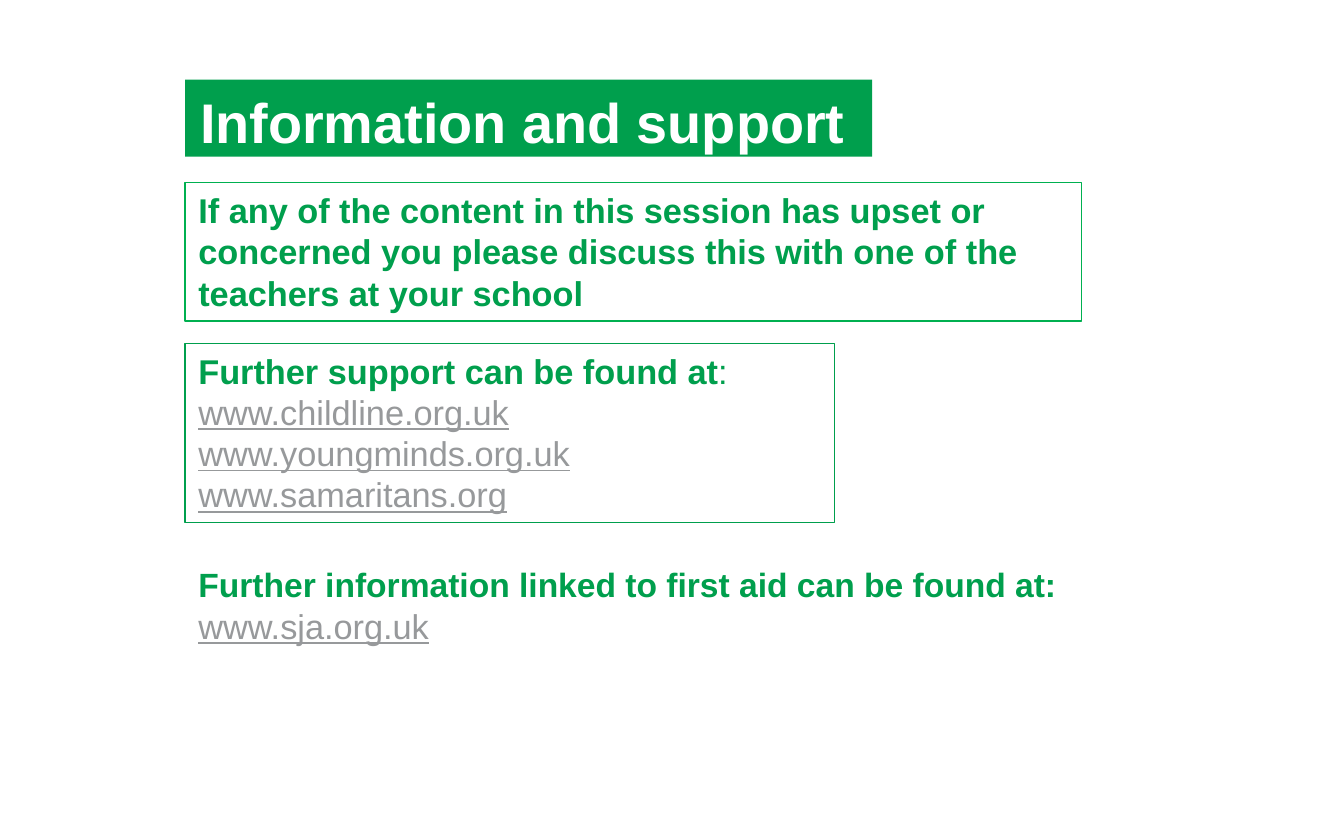
import pptx
import pptx.util
import pptx.dml.color
import pptx.enum.shapes
import pptx.enum.text

Pt = pptx.util.Pt
GREEN = pptx.dml.color.RGBColor(0x00, 0x9F, 0x4D)
BRIGHT_GREEN = pptx.dml.color.RGBColor(0x00, 0xB0, 0x50)
GREY = pptx.dml.color.RGBColor(0x97, 0x99, 0x9B)
WHITE = pptx.dml.color.RGBColor(0xFF, 0xFF, 0xFF)
LEFT = Pt(99.2)


def add_span(para, text, size, colour, bold=False, underline=False):
    span = para.add_run()
    span.text = text
    span.font.name = "Arial"
    span.font.size = Pt(size)
    span.font.color.rgb = colour
    span.font.bold = bold
    span.font.underline = underline


deck = pptx.Presentation()
deck.slide_width, deck.slide_height = Pt(720), Pt(450)
page = deck.slides.add_slide(deck.slide_layouts[5])

# Title band
title = page.shapes.title
title.left, title.top, title.width, title.height = LEFT, Pt(42.7), Pt(368), Pt(41.3)
title.fill.solid()
title.fill.fore_color.rgb = GREEN
frame = title.text_frame
frame.auto_size = pptx.enum.text.MSO_AUTO_SIZE.NONE
frame.vertical_anchor = pptx.enum.text.MSO_ANCHOR.TOP
frame.margin_left = frame.margin_right = Pt(8)
frame.margin_top = Pt(4.3)
frame.margin_bottom = 0
frame.paragraphs[0].alignment = pptx.enum.text.PP_ALIGN.LEFT
add_span(frame.paragraphs[0], "Information and support", 29.9, WHITE, bold=True)

# Text blocks: top, width, height, outline, heading size, heading, ending, links
blocks = [
    (97.9, 480.2, 74.2, BRIGHT_GREEN, 18.4,
     "If any of the content in this session has upset or concerned you "
     "please discuss this with one of the teachers at your school", "", []),
    (183.9, 347.8, 96, GREEN, 18.4, "Further support can be found at", ":",
     ["www.childline.org.uk", "www.youngminds.org.uk", "www.samaritans.org"]),
    (298.8, 478.8, 51.1, None, 18,
     "Further information linked to first aid can be found at:", "",
     ["www.sja.org.uk"]),
]
for top, width, height, outline, size, heading, ending, links in blocks:
    area = (LEFT, Pt(top), Pt(width), Pt(height))
    if outline is None:
        box = page.shapes.add_textbox(*area)
    else:
        box = page.shapes.add_shape(pptx.enum.shapes.MSO_SHAPE.RECTANGLE, *area)
        box.shadow.inherit = False
        box.fill.background()
        box.line.color.rgb = outline
        box.line.width = Pt(0.75)
    frame = box.text_frame
    frame.word_wrap = outline is not None
    frame.vertical_anchor = pptx.enum.text.MSO_ANCHOR.TOP

    # Heading, then one link to a line
    para = frame.paragraphs[0]
    add_span(para, heading, size, GREEN, bold=True)
    if ending:
        add_span(para, ending, size, GREEN)
    for link in links:
        add_span(frame.add_paragraph(), link, 18.4, GREY, underline=True)
    for para in frame.paragraphs:
        para.alignment = pptx.enum.text.PP_ALIGN.LEFT

deck.save("out.pptx")
